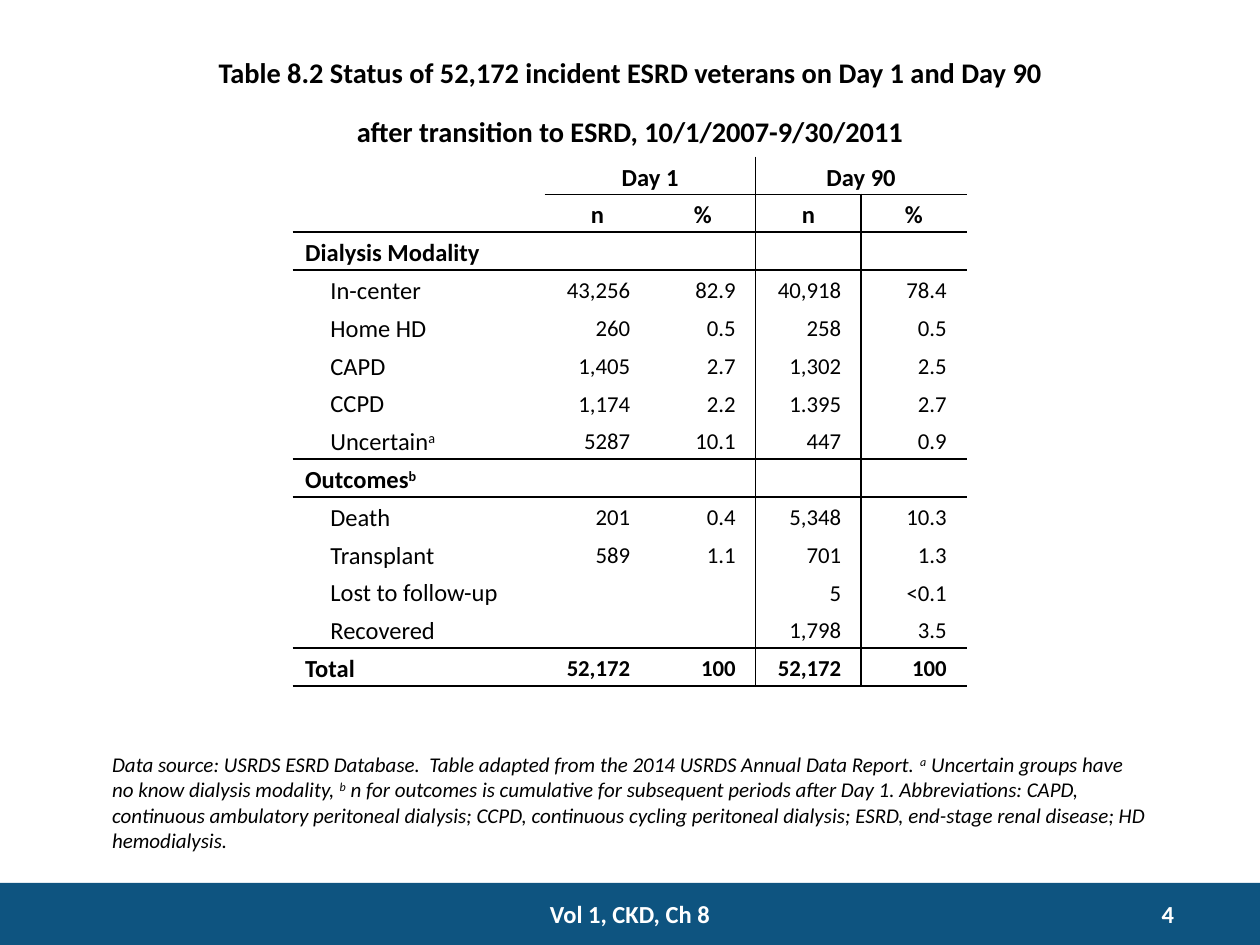
from dataclasses import dataclass

from lxml import etree
from pptx import Presentation
from pptx.dml.color import RGBColor
from pptx.enum.shapes import MSO_SHAPE
from pptx.enum.text import MSO_ANCHOR, MSO_AUTO_SIZE, PP_ALIGN
from pptx.oxml.ns import qn
from pptx.util import Pt

LEFT, CENTER, RIGHT = PP_ALIGN.LEFT, PP_ALIGN.CENTER, PP_ALIGN.RIGHT
MIDDLE = MSO_ANCHOR.MIDDLE
GROW = MSO_AUTO_SIZE.SHAPE_TO_FIT_TEXT
RECTANGLE = MSO_SHAPE.RECTANGLE
NO_STYLE = "{2D5ABB26-0587-4C30-8999-92F81FD0307C}"


@dataclass(frozen=True)
class Theme:
    font: str = "Calibri"
    ink: RGBColor = RGBColor(0, 0, 0)
    white: RGBColor = RGBColor(255, 255, 255)
    band: RGBColor = RGBColor(0x0E, 0x54, 0x80)
    title: int = 28
    label: int = 14
    number: int = 13
    note: int = 12


THEME = Theme()

TITLE = [
    "^Table 8.2 Status of 52,172 incident ESRD veterans on Day 1 and Day 90^",
    "^after transition to ESRD, 10/1/2007-9/30/2011^",
]
NOTE = (
    "Data source: USRDS ESRD Database.  Table adapted from the 2014 USRDS "
    "Annual Data Report. ^a^ Uncertain groups have no know dialysis modality, "
    "^b^ n for outcomes is cumulative for subsequent periods after Day 1. "
    "Abbreviations: CAPD, continuous ambulatory peritoneal dialysis; CCPD, "
    "continuous cycling peritoneal dialysis; ESRD, end-stage renal disease; "
    "HD hemodialysis."
)
ROWS = [
    ("", "Day 1", "", "Day 90", ""),
    ("", "n", "%", "n", "%"),
    ("Dialysis Modality", "", "", "", ""),
    ("In-center", "43,256", "82.9", "40,918", "78.4"),
    ("Home HD", "260", "0.5", "258", "0.5"),
    ("CAPD", "1,405", "2.7", "1,302", "2.5"),
    ("CCPD", "1,174", "2.2", "1.395", "2.7"),
    ("Uncertain^a^", "5287", "10.1", "447", "0.9"),
    ("Outcomes^b^", "", "", "", ""),
    ("Death", "201", "0.4", "5,348", "10.3"),
    ("Transplant", "589", "1.1", "701", "1.3"),
    ("Lost to follow-up", "", "", "5", "<0.1"),
    ("Recovered", "", "", "1,798", "3.5"),
    ("Total", "52,172", "100", "52,172", "100"),
]
HEADER_ROWS = 2
BOLD_ROWS = {0, 1, 2, 8, 13}
RULED_ROWS = {1, 7, 12, 13}  # rows with a full-width line below
COLUMN_WIDTHS = [144] + [60.3] * 4
ROW_HEIGHT = 21.6


def set_attributes(target, values):
    for name, value in values.items():
        setattr(target, name, value)


def write(p, text, size, color=THEME.ink, align=LEFT, **style):
    """Fill a paragraph; text between ^ marks is superscript."""
    p.alignment = align
    for i, part in enumerate(text.split("^")):
        if not part:
            continue
        r = p.add_run()
        r.text = part
        set_attributes(r.font, {"name": THEME.font, "size": Pt(size), **style})
        r.font.color.rgb = color
        if i % 2:
            r.font._element.set("baseline", "30000")


def add_text(s, box, lines, size, grow=False, **style):
    tf = s.shapes.add_textbox(*map(Pt, box)).text_frame
    tf.word_wrap = True
    if grow:
        tf.auto_size = GROW
    for i, line in enumerate(lines):
        p = tf.add_paragraph() if i else tf.paragraphs[0]
        write(p, line, size, **style)


def add_band(s, box):
    sp = s.shapes.add_shape(RECTANGLE, *map(Pt, box))
    sp.shadow.inherit = False
    sp.fill.solid()
    sp.fill.fore_color.rgb = THEME.band
    sp.line.fill.background()


def draw_borders(cell, sides):
    tcPr = cell._tc.get_or_add_tcPr()
    for side in "LRTB":
        if side in sides:
            ln = etree.SubElement(tcPr, qn(f"a:ln{side}"), w=str(Pt(1)))
            fill = etree.SubElement(ln, qn("a:solidFill"))
            etree.SubElement(fill, qn("a:srgbClr"), val=str(THEME.ink))


def has_line_below(row, col):
    return row in RULED_ROWS or (row == 0 and col > 0)


def border_sides(row, col):
    sides = ""
    if col == 3:
        sides += "L"
    if col == 2 or (row, col) == (0, 1):
        sides += "R"
    if has_line_below(row - 1, col):
        sides += "T"
    if has_line_below(row, col):
        sides += "B"
    return sides


def fill_cell(cell, row, col, text):
    is_number = row >= HEADER_ROWS and col > 0
    set_attributes(cell, {
        "vertical_anchor": MIDDLE,
        "margin_left": Pt(7.2),
        "margin_right": Pt(11.5 if is_number else 7.2),
        "margin_top": 0,
        "margin_bottom": 0,
    })
    draw_borders(cell, border_sides(row, col))
    cell.fill.background()

    p = cell.text_frame.paragraphs[0]
    size = THEME.number if is_number else THEME.label
    if not text:
        end = p._p.get_or_add_endParaRPr()
        end.set("sz", str(size * 100))
        return
    p.line_spacing = 1.15
    if col == 0 and row not in BOLD_ROWS:
        p._p.get_or_add_pPr().set("marL", str(Pt(14.4)))
    align = RIGHT if is_number else CENTER if col else LEFT
    write(p, text, size, align=align, bold=row in BOLD_ROWS)


def add_status_table(s, left, top):
    width, height = sum(COLUMN_WIDTHS), ROW_HEIGHT * len(ROWS)
    frame = s.shapes.add_table(len(ROWS), len(COLUMN_WIDTHS),
                               Pt(left), Pt(top), Pt(width), Pt(height))
    table = frame.table
    set_attributes(table, {"first_row": False, "horz_banding": False})
    table._tbl.tblPr.find(qn("a:tableStyleId")).text = NO_STYLE
    for column, column_width in zip(table.columns, COLUMN_WIDTHS):
        column.width = Pt(column_width)
    for row in table.rows:
        row.height = Pt(ROW_HEIGHT)
    for col in (1, 3):
        table.cell(0, col).merge(table.cell(0, col + 1))
    for row, values in enumerate(ROWS):
        for col, text in enumerate(values):
            fill_cell(table.cell(row, col), row, col, text)


def main():
    prs = Presentation()
    prs.slide_width, prs.slide_height = Pt(720), Pt(540)
    s = prs.slides.add_slide(prs.slide_layouts[6])

    add_band(s, (0, 504.5, 720, 35.5))
    add_text(s, (57, 426, 606, 65.5), [NOTE], THEME.note, grow=True, italic=True)
    add_text(s, (0, 24.5, 720, 52.5), TITLE, THEME.title, grow=True,
             align=CENTER, bold=True)
    footer = {"color": THEME.white, "bold": True}
    add_text(s, (282, 510, 156, 24), ["Vol 1, CKD, Ch 8"], THEME.label,
             align=CENTER, **footer)
    add_text(s, (606, 510, 72, 22), ["4"], THEME.label, align=RIGHT, **footer)
    add_status_table(s, 167.2, 89.5)
    prs.save("out.pptx")


if __name__ == "__main__":
    main()
